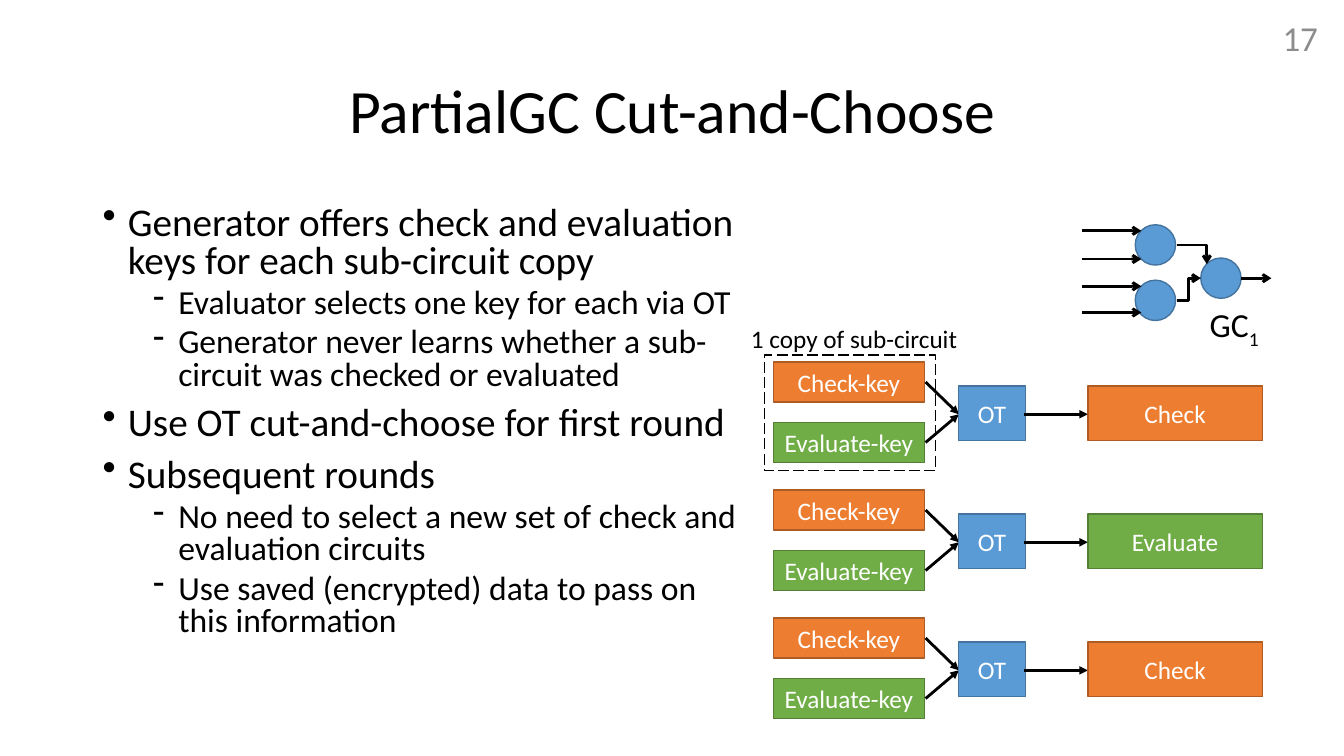
import pptx
import pptx.util
import pptx.oxml
import pptx.oxml.ns
import pptx.dml.color
import pptx.enum.dml
import pptx.enum.shapes
import pptx.enum.text

Inches = pptx.util.Inches
Pt = pptx.util.Pt
Kind = pptx.enum.shapes.MSO_SHAPE
Link = pptx.enum.shapes.MSO_CONNECTOR
Align = pptx.enum.text.PP_ALIGN
Anchor = pptx.enum.text.MSO_ANCHOR

COLORS = {
    "black": "000000", "white": "FFFFFF", "gray": "8C8C8C",
    "blue": "5B9BD5", "blue edge": "43739E",
    "orange": "ED7D31", "orange edge": "AF5C24",
    "green": "70AD47", "green edge": "538035",
}
POINTS = [
    (0, "Generator offers check and evaluation keys for each sub-circuit copy"),
    (1, "Evaluator selects one key for each via OT"),
    (1, "Generator never learns whether a sub-circuit was checked or evaluated"),
    (0, "Use OT cut-and-choose for first round"),
    (0, "Subsequent rounds"),
    (1, "No need to select a new set of check and evaluation circuits"),
    (1, "Use saved (encrypted) data to pass on this information"),
]
ROUNDS = [("Check", "orange"), ("Evaluate", "green"), ("Check", "orange")]


def color(name):
    return pptx.dml.color.RGBColor.from_string(COLORS[name])


def add_xml(parent, tag, **attrs):
    node = pptx.oxml.parse_xml(f"<a:{tag} {pptx.oxml.ns.nsdecls('a')}/>")
    for key, value in attrs.items():
        node.set(key, value)
    parent.append(node)


def style(para, size, tint="black", align=Align.LEFT):
    para.alignment = align
    para.font.name = "Calibri"
    para.font.size = Pt(size)
    para.font.color.rgb = color(tint)


def add_text(slide, text, left, top, width, height, size, tint="black",
             align=Align.LEFT, anchor=Anchor.TOP):
    box = slide.shapes.add_textbox(Inches(left), Inches(top), Inches(width), Inches(height))
    frame = box.text_frame
    frame.word_wrap = True
    frame.vertical_anchor = anchor
    para = frame.paragraphs[0]
    para.text = text
    style(para, size, tint, align)
    return para


def add_list(slide):
    box = slide.shapes.add_textbox(Inches(0.92), Inches(2), Inches(6.62), Inches(4.76))
    frame = box.text_frame
    frame.word_wrap = True
    for index, (level, text) in enumerate(POINTS):
        para = frame.add_paragraph() if index else frame.paragraphs[0]
        para.text = text
        para.level = level
        para.line_spacing = 0.8
        para.space_before = Pt(5 if level else 10)
        props = para._p.get_or_add_pPr()
        props.set("marL", str(Inches(0.25 + 0.5 * level)))
        props.set("indent", str(Inches(-0.25)))
        add_xml(props, "buChar", char="-" if level else "•")
        style(para, 24 if level else 28)


def add_box(slide, left, top, width, height, tint, text="", kind=Kind.RECTANGLE):
    box = slide.shapes.add_shape(kind, Inches(left), Inches(top), Inches(width), Inches(height))
    box.shadow.inherit = False
    box.fill.solid()
    box.fill.fore_color.rgb = color(tint)
    box.line.color.rgb = color(tint + " edge")
    box.line.width = Pt(1)
    if text:
        frame = box.text_frame
        frame.margin_left = frame.margin_right = 0
        frame.vertical_anchor = Anchor.MIDDLE
        frame.paragraphs[0].text = text
        style(frame.paragraphs[0], 18, "white", Align.CENTER)


def add_arrow(slide, start, end, tip="triangle", kind=Link.STRAIGHT):
    points = [Inches(value) for value in (*start, *end)]
    arrow = slide.shapes.add_connector(kind, *points)
    arrow.line.color.rgb = color("black")
    arrow.line.width = Pt(2)
    add_xml(arrow.line._get_or_add_ln(), "tailEnd", type=tip)
    add_xml(arrow._element.spPr, "effectLst")
    return arrow


def add_gates(slide):
    label = add_text(slide, "GC", 11.9, 2.97, 0.7, 0.39, 24)
    sub = label.add_run()
    sub.text = "1"
    sub._r.get_or_add_rPr().set("baseline", "-25000")
    for left, top in [(11.26, 2.23), (11.26, 2.78), (11.91, 2.56)]:
        add_box(slide, left, top, 0.4, 0.4, "blue", kind=Kind.OVAL)
    for y in (2.29, 2.57, 2.84, 3.1):
        add_arrow(slide, (10.73, y), (11.32, y), "arrow")
    bend = add_arrow(slide, (11.67, 2.43), (11.97, 2.62), "arrow", Link.ELBOW)
    bend._element.spPr.prstGeom.set("prst", "bentConnector2")
    add_arrow(slide, (11.67, 2.98), (11.91, 2.76), "arrow", Link.ELBOW)
    add_arrow(slide, (12.31, 2.76), (12.61, 2.76), "arrow")


def add_round(slide, top, result, tint):
    middle = top + 0.52
    for name, fill, y in [("Check-key", "orange", top), ("Evaluate-key", "green", top + 0.6)]:
        add_box(slide, 7.67, y, 1.5, 0.4, fill, name)
        add_arrow(slide, (9.18, y + 0.2), (9.51, middle))
    add_box(slide, 9.51, top + 0.24, 0.66, 0.54, "blue", "OT")
    add_arrow(slide, (10.16, middle), (10.79, middle))
    add_box(slide, 10.79, top + 0.24, 1.73, 0.54, tint, result)


def add_frame(slide):
    frame = slide.shapes.add_shape(
        Kind.RECTANGLE, Inches(7.58), Inches(3.52), Inches(1.7), Inches(1.15))
    frame.shadow.inherit = False
    frame.fill.background()
    frame.line.color.rgb = color("black")
    frame.line.width = Pt(1)
    frame.line.dash_style = pptx.enum.dml.MSO_LINE.LONG_DASH
    add_text(slide, "1 copy of sub-circuit", 7.35, 3.16, 2.62, 0.4, 18)


def main():
    deck = pptx.Presentation()
    deck.slide_width = Inches(13.33)
    deck.slide_height = Inches(7.5)
    slide = deck.slides.add_slide(deck.slide_layouts[6])
    title = add_text(slide, "PartialGC Cut-and-Choose", 0.92, 0.4, 11.5, 1.45, 44,
                     align=Align.CENTER, anchor=Anchor.MIDDLE)
    title.line_spacing = 0.9
    add_list(slide)
    add_text(slide, "17", 10.17, 0.17, 3, 0.4, 25, "gray", Align.RIGHT, Anchor.MIDDLE)
    add_gates(slide)
    for index, (result, tint) in enumerate(ROUNDS):
        add_round(slide, 3.59 + 1.27 * index, result, tint)
    add_frame(slide)
    deck.save("out.pptx")


if __name__ == "__main__":
    main()
